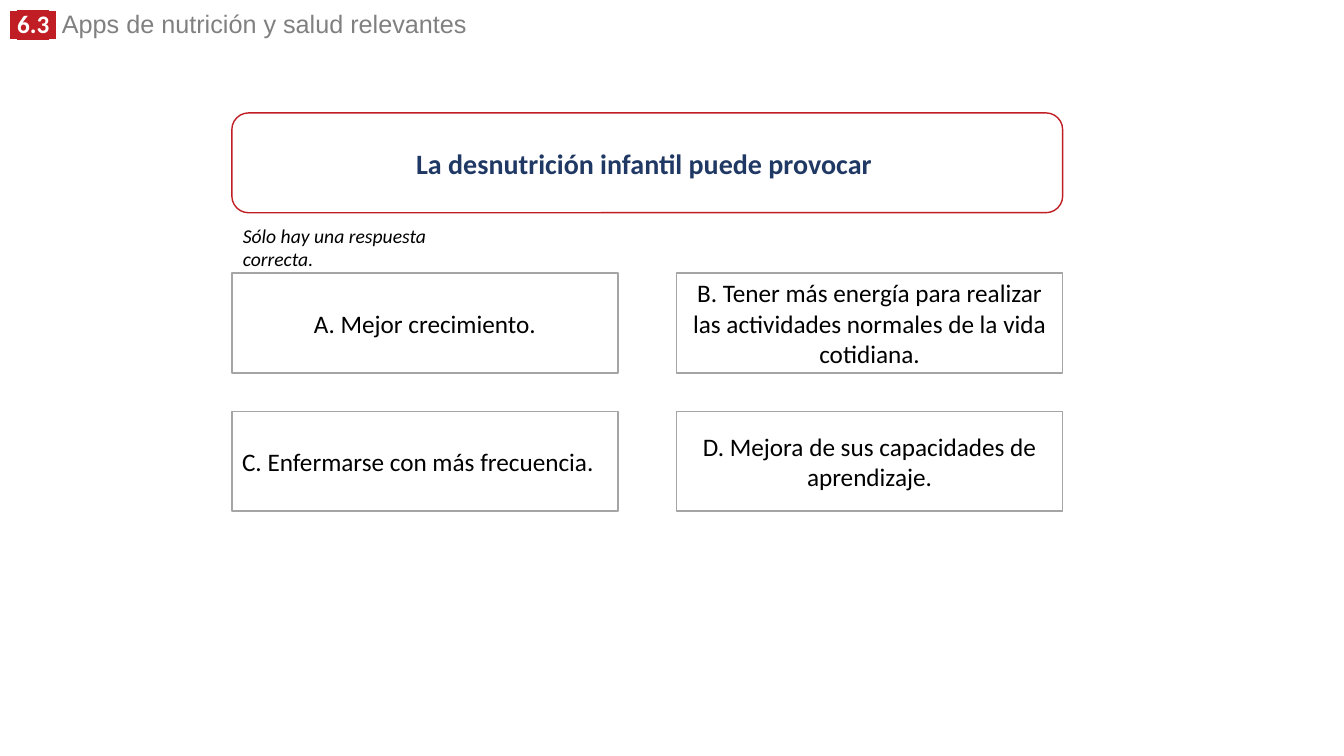
from lxml import etree
from pptx import Presentation
from pptx.dml.color import RGBColor
from pptx.enum.shapes import MSO_SHAPE
from pptx.enum.text import MSO_ANCHOR, PP_ALIGN
from pptx.oxml.ns import qn
from pptx.util import Inches, Pt

RECT, ROUNDED = MSO_SHAPE.RECTANGLE, MSO_SHAPE.ROUNDED_RECTANGLE
TOP, MIDDLE = MSO_ANCHOR.TOP, MSO_ANCHOR.MIDDLE
LEFT, CENTER = PP_ALIGN.LEFT, PP_ALIGN.CENTER
COLORS = {"white": "FFFFFF", "red": "C01E24", "gray": "808080",
          "border": "A5A5A5", "navy": "203864", "black": "000000"}


def add_run(p, text, size, color, font="Calibri", bold=False, italic=False):
    r = p.add_run()
    r.text = text
    r.font.size = Pt(size)
    r.font.name = font
    r.font.bold = bold
    r.font.italic = italic
    r.font.color.rgb = RGBColor.from_string(COLORS[color])
    return r


def add_box(shape, x, y, w, line, text, size, color, bold=False):
    sp = s.shapes.add_shape(shape, Inches(x), Inches(y), Inches(w), Inches(0.99))
    sp.shadow.inherit = False
    sp.fill.solid()
    sp.fill.fore_color.rgb = RGBColor.from_string(COLORS["white"])
    sp.line.color.rgb = RGBColor.from_string(COLORS[line])
    sp.line.width = Pt(1)
    tf = sp.text_frame
    tf.word_wrap = True
    tf.vertical_anchor = MIDDLE
    p = tf.paragraphs[0]
    p.alignment = CENTER
    add_run(p, text, size, color, bold=bold)
    return tf


prs = Presentation()
prs.slide_width, prs.slide_height = Inches(13.33), Inches(7.5)
s = prs.slides.add_slide(prs.slide_layouts[5])

# Section title with highlighted number
title = s.shapes.title
title.left, title.top = Inches(0), Inches(0.09)
title.width, title.height = Inches(9.52), Inches(0.35)
tf = title.text_frame
tf.word_wrap = True
tf.vertical_anchor = TOP
p = tf.paragraphs[0]
p.alignment = LEFT
p.line_spacing = 0.8
for text, font in ((" ", "Arial"), ("6.3", "Calibri"), (" ", "Arial")):
    r = add_run(p, text, 18, "white", font, bold=True)
    highlight = etree.Element(qn("a:highlight"))
    etree.SubElement(highlight, qn("a:srgbClr")).set("val", COLORS["red"])
    r.font.fill  # the highlight follows the fill in schema order
    r._r.rPr.find(qn("a:solidFill")).addnext(highlight)
add_run(p, " Apps de nutrición y salud relevantes", 18, "gray", "Arial")

# Question
add_box(ROUNDED, 2.3, 1.12, 8.24, "red",
        "La desnutrición infantil puede provocar ", 20, "navy", bold=True)

# Instruction
note = s.shapes.add_textbox(Inches(2.31), Inches(2.17), Inches(2.36), Inches(0.34))
note.text_frame.word_wrap = True
add_run(note.text_frame.paragraphs[0], "Sólo hay una respuesta correcta.",
        14, "black", italic=True)

# Answers in a two by two grid
answers = ["A. Mejor crecimiento.",
           "B. Tener más energía para realizar las actividades normales de la vida cotidiana.",
           "C. Enfermarse con más frecuencia.",
           "D. Mejora de sus capacidades de aprendizaje."]
for i, answer in enumerate(answers):
    row, col = divmod(i, 2)
    tf = add_box(RECT, 2.3 + 4.41 * col, 2.71 + 1.37 * row, 3.83, "border",
                 answer, 18, "black")
    if answer.startswith("C."):
        tf.margin_left, tf.margin_right = Inches(0.05), Inches(0.19)

prs.save("out.pptx")
